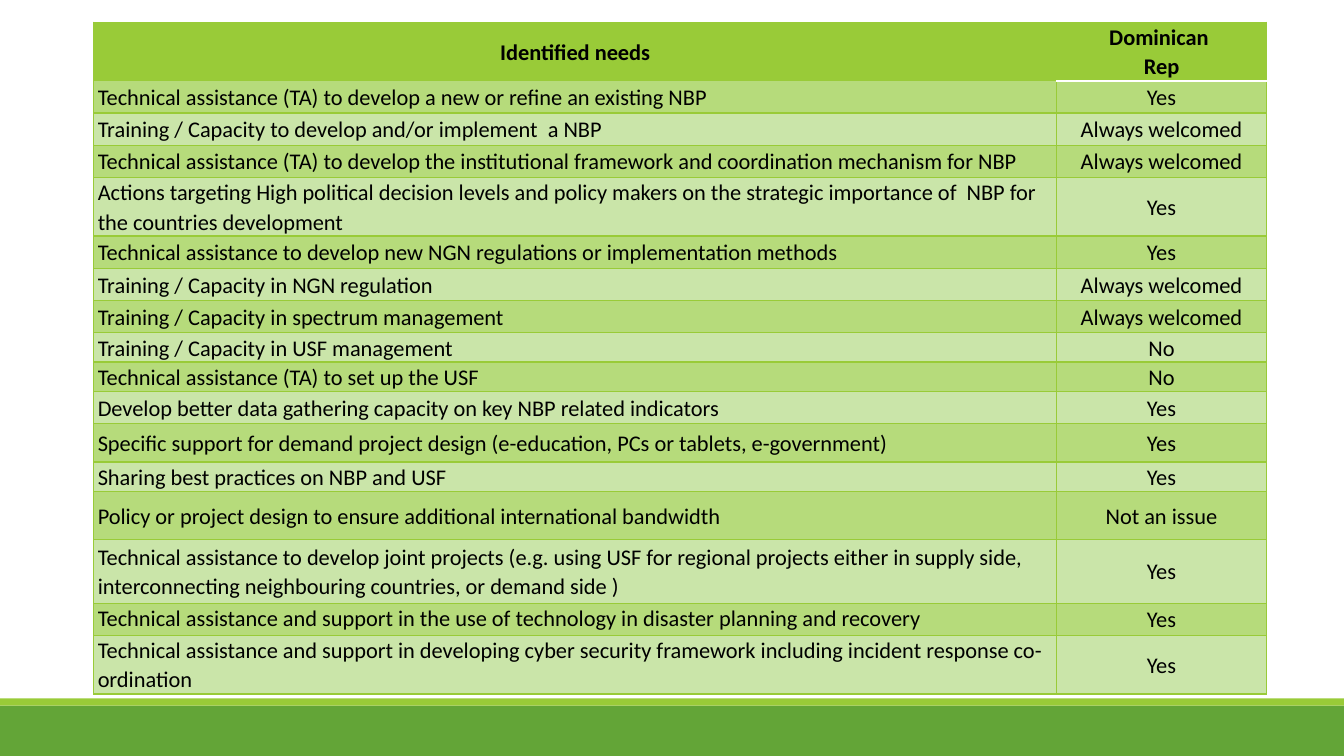
"""Build the slide listing identified broadband plan needs."""
import dataclasses

import lxml.etree
import pptx
import pptx.dml.color
import pptx.enum.shapes
import pptx.enum.text
import pptx.oxml.ns
import pptx.util

Inches = pptx.util.Inches
ANCHOR = pptx.enum.text.MSO_ANCHOR
ALIGN = pptx.enum.text.PP_ALIGN

COLUMN_WIDTHS = (9.55, 2.08)
HEADINGS = ("Identified needs", "Dominican \nRep")
HEADING_HEIGHT = 0.34
NEEDS = [
    ("Technical assistance (TA) to develop a new or refine an existing NBP", "Yes", 0.32),
    ("Training / Capacity to develop and/or implement  a NBP", "Always welcomed", 0.32),
    ("Technical assistance (TA) to develop the institutional framework and coordination "
     "mechanism for NBP", "Always welcomed", 0.32),
    ("Actions targeting High political decision levels and policy makers on the strategic "
     "importance of  NBP for the countries development", "Yes", 0.48),
    ("Technical assistance to develop new NGN regulations or implementation methods", "Yes", 0.32),
    ("Training / Capacity in NGN regulation", "Always welcomed", 0.32),
    ("Training / Capacity in spectrum management", "Always welcomed", 0.32),
    ("Training / Capacity in USF management", "No", 0.17),
    ("Technical assistance (TA) to set up the USF", "No", 0.2),
    ("Develop better data gathering capacity on key NBP related indicators", "Yes", 0.32),
    ("Specific support for demand project design (e-education, PCs or tablets, e-government)",
     "Yes", 0.38),
    ("Sharing best practices on NBP and USF", "Yes", 0.27),
    ("Policy or project design to ensure additional international bandwidth", "Not an issue", 0.48),
    ("Technical assistance to develop joint projects (e.g. using USF for regional projects either "
     "in supply side, interconnecting neighbouring countries, or demand side )", "Yes", 0.63),
    ("Technical assistance and support in the use of technology in disaster planning and recovery",
     "Yes", 0.32),
    ("Technical assistance and support in developing cyber security framework including incident "
     "response co-ordination", "Yes", 0.48),
]


@dataclasses.dataclass(frozen=True)
class Theme:
    """Colours, font and sizes of the slide."""
    footer: str = "63A537"
    accent: str = "99CB38"
    bands: tuple = ("B6DB7B", "CAE5A9")
    rule: str = "FFFFFF"
    text: str = "000000"
    font: str = "Calibri"
    size: float = 16
    spacing: float = 1.07
    border: float = 1
    heading_border: float = 1.25


class SlideBuilder:
    """Draws styled elements on one slide."""

    def __init__(self, slide, theme):
        self.slide = slide
        self.theme = theme

    def stripe(self, top, height, colour):
        """Draw a full-width band."""
        band = self.slide.shapes.add_shape(
            pptx.enum.shapes.MSO_SHAPE.RECTANGLE, 0, Inches(top), Inches(13.33), Inches(height))
        band.shadow.inherit = False
        band.fill.solid()
        band.fill.fore_color.rgb = pptx.dml.color.RGBColor.from_string(colour)
        band.line.fill.background()

    def border(self, cell, side, colour, width):
        """Draw one edge of a cell."""
        qn = pptx.oxml.ns.qn
        edge = lxml.etree.SubElement(
            cell._tc.get_or_add_tcPr(), qn(f"a:ln{side}"), w=str(pptx.util.Pt(width)))
        fill = lxml.etree.SubElement(edge, qn("a:solidFill"))
        lxml.etree.SubElement(fill, qn("a:srgbClr"), val=colour)

    def cell(self, cell, text, fill, centred, bold=False, ruled=(), anchor=ANCHOR.MIDDLE):
        """Fill in a cell, with white edges on the ruled sides."""
        theme = self.theme
        cell.margin_left = cell.margin_right = Inches(0.04)
        cell.margin_top = cell.margin_bottom = 0
        cell.vertical_anchor = anchor
        for side in "LRTB":
            if side in ruled:
                self.border(cell, side, theme.rule, theme.heading_border)
            else:
                self.border(cell, side, theme.accent, theme.border)
        cell.fill.solid()
        cell.fill.fore_color.rgb = pptx.dml.color.RGBColor.from_string(fill)
        paragraph = cell.text_frame.paragraphs[0]
        paragraph.text = text
        paragraph.alignment = ALIGN.CENTER if centred else ALIGN.LEFT
        paragraph.line_spacing = theme.spacing
        for run in paragraph.runs:
            run.font.name = theme.font
            run.font.size = pptx.util.Pt(theme.size)
            run.font.bold = bold
            run.font.color.rgb = pptx.dml.color.RGBColor.from_string(theme.text)

    def needs_table(self, left, top, height):
        """Draw the needs with the country's answers."""
        theme = self.theme
        frame = self.slide.shapes.add_table(
            len(NEEDS) + 1, len(COLUMN_WIDTHS), Inches(left), Inches(top),
            Inches(sum(COLUMN_WIDTHS)), Inches(height))
        table = frame.table
        for column, width in zip(table.columns, COLUMN_WIDTHS):
            column.width = Inches(width)
        table.rows[0].height = Inches(HEADING_HEIGHT)
        for index, heading in enumerate(HEADINGS):
            self.cell(table.cell(0, index), heading, theme.accent, True, True,
                      "B" if index else "")
        for row, (need, answer, row_height) in enumerate(NEEDS, start=1):
            table.rows[row].height = Inches(row_height)
            fill = theme.bands[(row - 1) % 2]
            anchor = ANCHOR.TOP if row > len(NEEDS) - 2 else ANCHOR.MIDDLE
            self.cell(table.cell(row, 0), need, fill, False, anchor=anchor)
            self.cell(table.cell(row, 1), answer, fill, True, ruled="T" if row == 1 else "")
        frame.height = Inches(height)


def main():
    """Create and save the presentation."""
    deck = pptx.Presentation()
    deck.slide_width, deck.slide_height = Inches(13.33), Inches(7.5)
    theme = Theme()
    builder = SlideBuilder(deck.slides.add_slide(deck.slide_layouts[6]), theme)
    builder.stripe(7, 0.5, theme.footer)
    builder.stripe(6.93, 0.07, theme.accent)
    builder.needs_table(0.93, 0.22, 6.51)
    deck.save("out.pptx")


if __name__ == "__main__":
    main()
